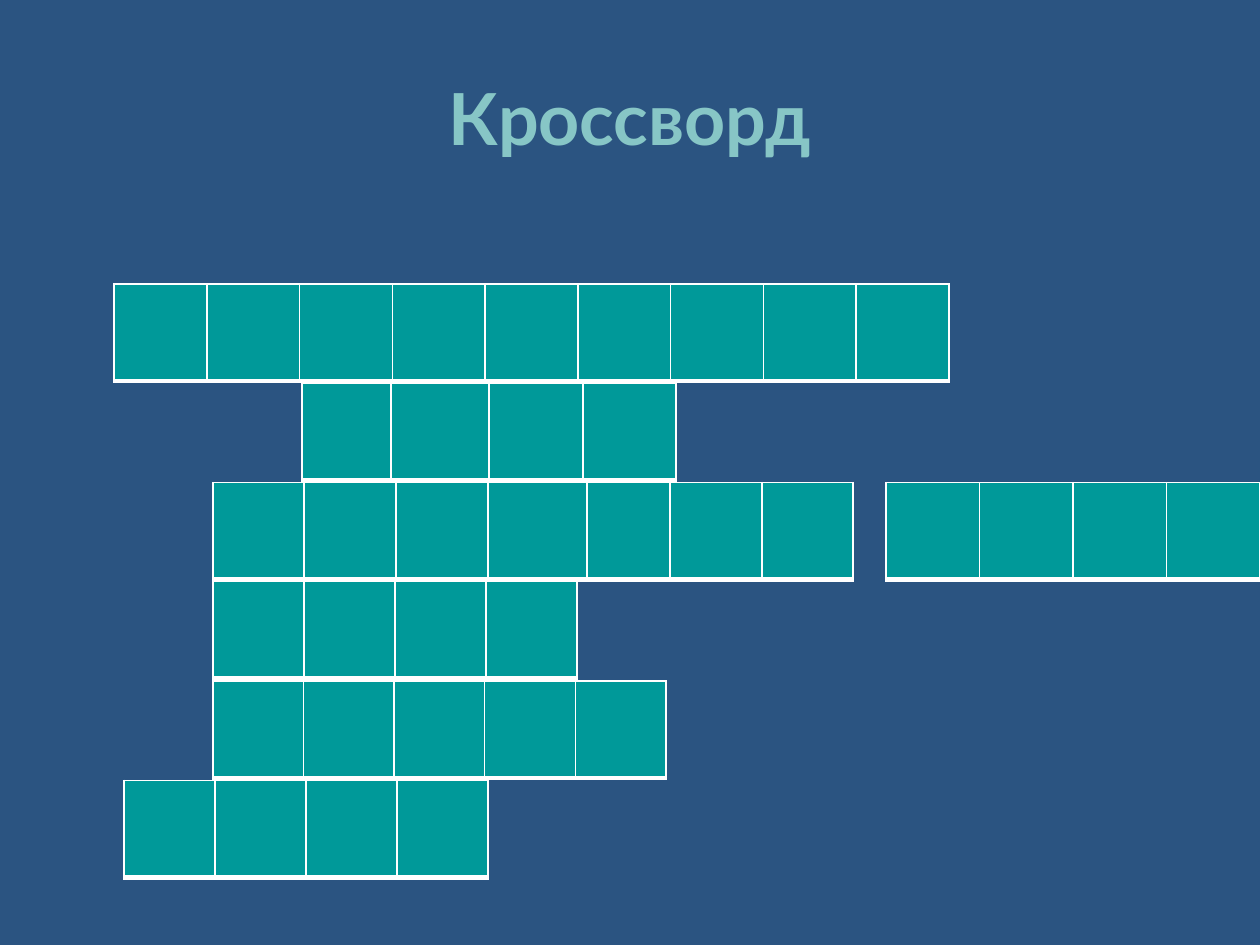
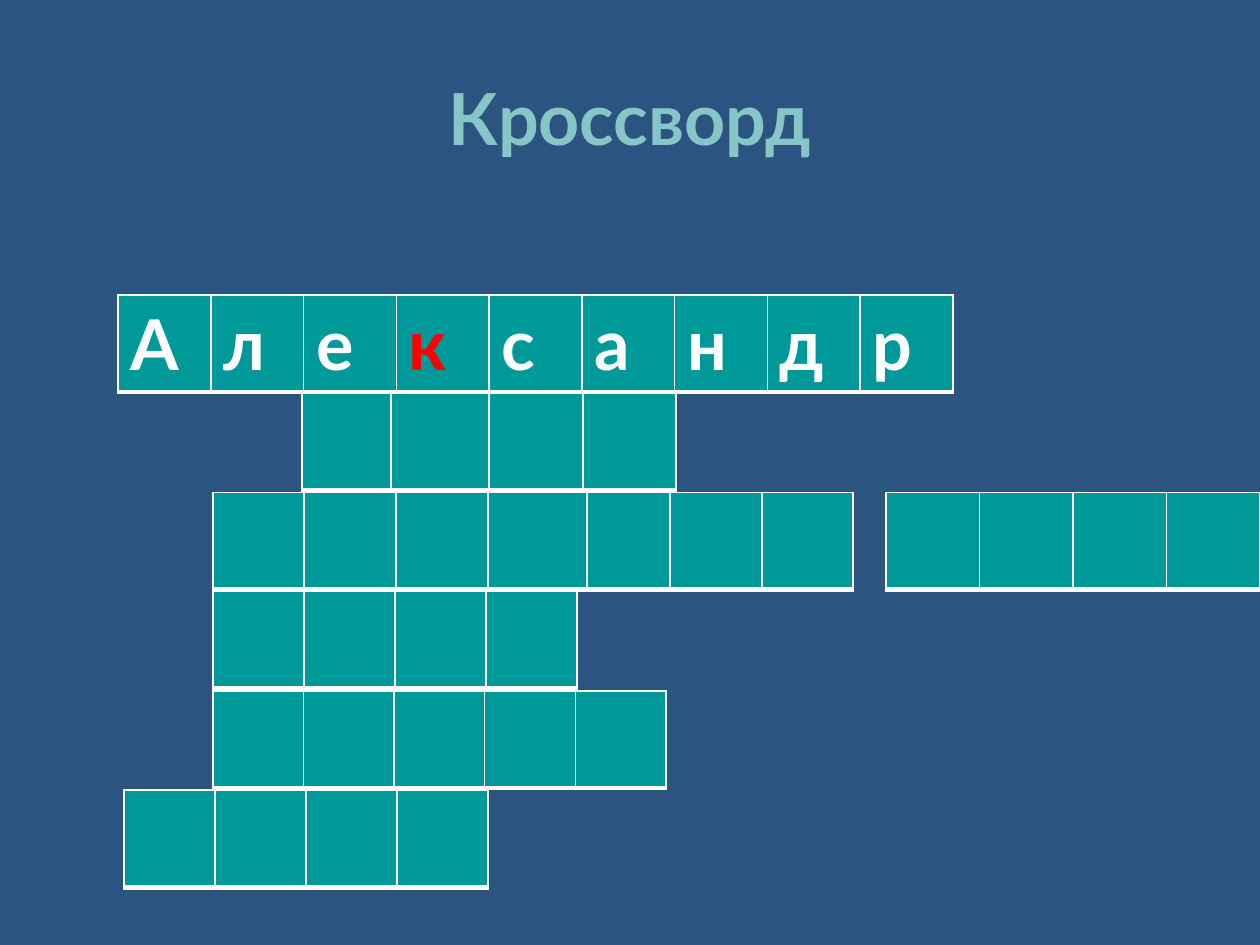
from dataclasses import dataclass

from lxml.etree import SubElement
from pptx import Presentation
from pptx.dml.color import RGBColor as Color
from pptx.enum.text import MSO_ANCHOR as Anchor, PP_ALIGN as Align
from pptx.oxml.ns import qn
from pptx.util import Emu, Pt

EMU_PER_PX = 914400 / 126
ROW_PITCH = 99.25
CELL_HEIGHT = 97
WORD_ROWS = [
    (1, 302, [89, 98, 94, 93]),
    (2, 213, [91, 92, 92, 99, 83, 92, 91]),
    (2, 886, [374 / 4] * 4),
    (3, 213, [364 / 4] * 4),
    (4, 213, [453 / 5] * 5),
    (5, 124, [364 / 4] * 4),
]
NAME_WIDTHS = [835 / 9] * 9


@dataclass(frozen=True)
class Theme:
    """Colours, font and type sizes of the deck."""

    background: str = "2B5481"
    title: str = "87C6C6"
    cell: str = "009999"
    line: str = "FFFFFF"
    letter: str = "FFFFFF"
    key_letter: str = "FF0000"
    font: str = "Lato"
    title_size: int = 41
    letter_size: int = 40
    thin: int = 1
    thick: int = 3


def px(length):
    """Turn pixels into EMU."""
    return Emu(round(length * EMU_PER_PX))


class Deck:
    """Holds the theme, the presentation and the current slide."""

    def __init__(self, theme):
        """Start a presentation with the shared background."""
        self.theme = theme
        self.presentation = Presentation()
        self.presentation.slide_width = px(1260)
        self.presentation.slide_height = px(945)
        fill = self.presentation.slide_master.background.fill
        fill.solid()
        fill.fore_color.rgb = Color.from_string(theme.background)
        self.slide = None

    def format_runs(self, paragraph, size, color):
        """Apply the bold deck font to every run."""
        for run in paragraph.runs:
            run.font.name = self.theme.font
            run.font.size = Pt(size)
            run.font.bold = True
            run.font.color.rgb = Color.from_string(color)

    def add_slide(self, title):
        """Add a slide with its title."""
        layout = self.presentation.slide_layouts.get_by_name("Title Only")
        self.slide = self.presentation.slides.add_slide(layout)
        shape = self.slide.shapes.title
        shape.left, shape.top, shape.width, shape.height = map(px, (63, 38, 1134, 157))
        shape.text_frame.text = title
        shape.text_frame.vertical_anchor = Anchor.MIDDLE
        paragraph = shape.text_frame.paragraphs[0]
        paragraph.alignment = Align.CENTER
        self.format_runs(paragraph, self.theme.title_size, self.theme.title)

    def add_borders(self, cell):
        """Draw thin sides and a thick bottom edge on a cell."""
        properties = cell._tc.get_or_add_tcPr()
        for index, side in enumerate("LRTB"):
            weight = self.theme.thick if side == "B" else self.theme.thin
            line = SubElement(properties, qn(f"a:ln{side}"), w=str(Pt(weight)))
            fill = SubElement(line, qn("a:solidFill"))
            SubElement(fill, qn("a:srgbClr"), val=self.theme.line)
            properties.insert(index, line)

    def add_word(self, left, top, widths, letters="", key_index=None):
        """Add one crossword word as a single-row table."""
        frame = self.slide.shapes.add_table(
            1, len(widths), px(left), px(top), px(sum(widths)), px(CELL_HEIGHT))
        table = frame.table
        table.first_row = table.horz_banding = False
        for index, width in enumerate(widths):
            table.columns[index].width = px(width)
            cell = table.cell(0, index)
            cell.fill.solid()
            cell.fill.fore_color.rgb = Color.from_string(self.theme.cell)
            self.add_borders(cell)
            if letters:
                cell.text_frame.text = letters[index]
                color = self.theme.key_letter if index == key_index else self.theme.letter
                self.format_runs(cell.text_frame.paragraphs[0], self.theme.letter_size, color)

    def add_empty_words(self, grid_top):
        """Add the unsolved words below the first row."""
        for row, left, widths in WORD_ROWS:
            self.add_word(left, grid_top + row * ROW_PITCH, widths)


def main():
    """Build the empty crossword and the one with its first answer."""
    deck = Deck(Theme())
    deck.add_slide("Кроссворд")
    deck.add_word(114, 284, NAME_WIDTHS)
    deck.add_empty_words(284)

    deck.add_slide("Кроссворд")
    deck.add_word(118, 295, NAME_WIDTHS, "Александр", key_index=3)
    deck.add_empty_words(294)
    deck.presentation.save("out.pptx")


if __name__ == "__main__":
    main()
